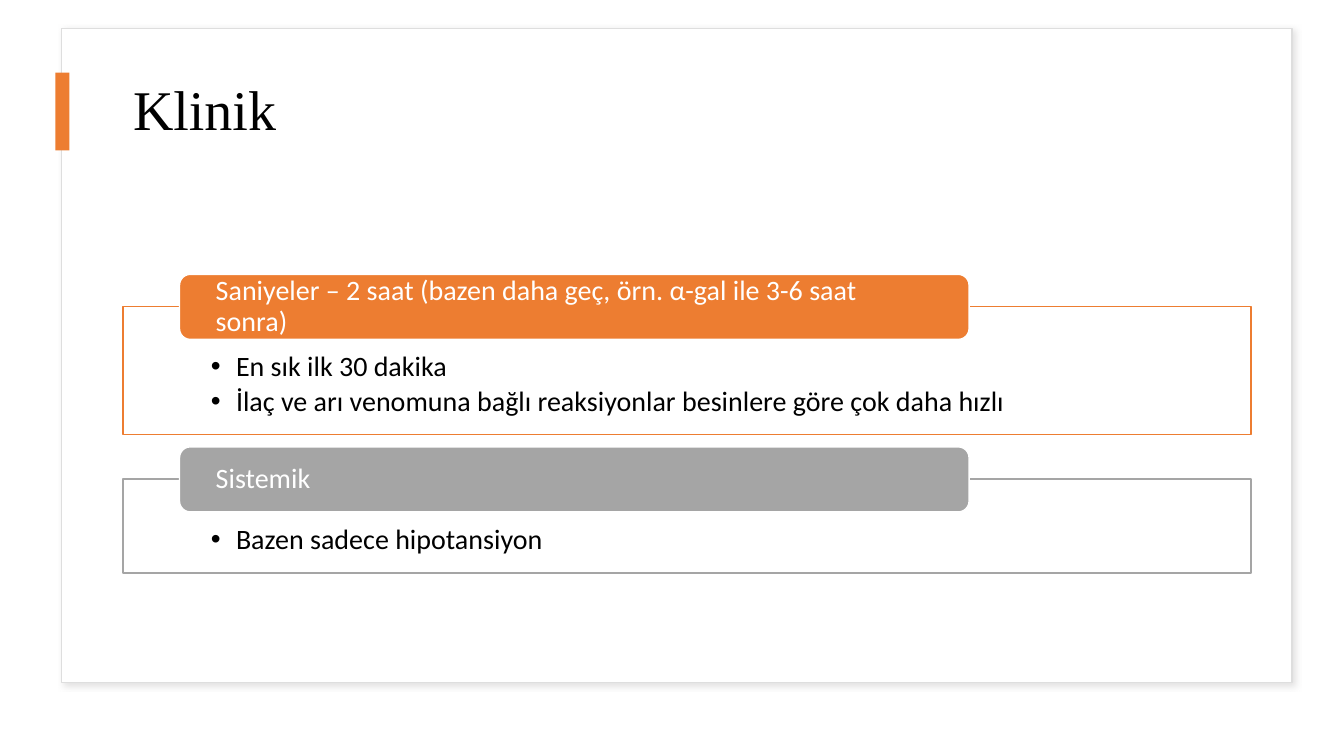
from lxml import etree
from pptx import Presentation
from pptx.dml.color import RGBColor
from pptx.enum.shapes import MSO_SHAPE as Shape
from pptx.enum.text import MSO_ANCHOR as Anchor, PP_ALIGN as Align
from pptx.oxml import parse_xml
from pptx.oxml.ns import nsdecls, qn
from pptx.util import Pt

COLORS = {
    "white": "FFFFFF",
    "black": "000000",
    "orange": "ED7D31",
    "gray": "A5A5A5",
    "border": "DEDEDE",
    "shadow": "C5C3C3",
}

deck = Presentation()
deck.slide_width, deck.slide_height = Pt(960), Pt(540)
page = deck.slides.add_slide(deck.slide_layouts[6])


def add_block(kind, left, top, width, height, fill, line=None):
    block = page.shapes.add_shape(kind, Pt(left), Pt(top), Pt(width), Pt(height))
    block.shadow.inherit = False
    block.fill.solid()
    block.fill.fore_color.rgb = RGBColor.from_string(COLORS[fill])
    if line:
        block.line.color.rgb = RGBColor.from_string(COLORS[line])
        block.line.width = Pt(1)
    else:
        block.line.fill.background()
    return block


def write_text(box, lines, frame_format, font_name, size, color, space_after=0, bullet=False):
    frame = box.text_frame
    for name, value in frame_format.items():
        setattr(frame, name, value)
    for index, line in enumerate(lines):
        para = frame.add_paragraph() if index else frame.paragraphs[0]
        if bullet:
            properties = para._p.get_or_add_pPr()
            properties.set("marL", str(Pt(18)))
            properties.set("indent", str(Pt(-18)))
            properties.append(parse_xml(f'<a:buFont {nsdecls("a")} typeface="Arial"/>'))
            properties.append(parse_xml(f'<a:buChar {nsdecls("a")} char="•"/>'))
        para.alignment = Align.LEFT
        para.line_spacing = 0.9
        para.space_after = Pt(space_after)
        span = para.add_run()
        span.text = line
        span.font.name = font_name
        span.font.size = Pt(size)
        span.font.color.rgb = RGBColor.from_string(COLORS[color])


card = add_block(Shape.RECTANGLE, 44, 20.2, 879, 467.2, "white", "border")
effects = card._element.spPr.find(qn("a:effectLst"))
effects.append(parse_xml(
    f'<a:outerShdw {nsdecls("a")} blurRad="{Pt(4)}" dist="{Pt(3)}" dir="2700000" '
    f'algn="tl" rotWithShape="0"><a:srgbClr val="{COLORS["shadow"]}">'
    '<a:alpha val="50000"/></a:srgbClr></a:outerShdw>'
))

title = page.shapes.add_textbox(Pt(88), Pt(40.3), Pt(805.7), Pt(80))
title_format = {"word_wrap": True, "vertical_anchor": Anchor.MIDDLE}
write_text(title, ["Klinik"], title_format, "Times New Roman", 40, "black")

add_block(Shape.RECTANGLE, 39.6, 51.8, 10, 55.6, "orange")

panel_format = {
    "word_wrap": True,
    "vertical_anchor": Anchor.TOP,
    "margin_left": Pt(62.6),
    "margin_right": Pt(62.6),
    "margin_top": Pt(33),
    "margin_bottom": Pt(11.5),
}
header_format = {
    "word_wrap": True,
    "vertical_anchor": Anchor.MIDDLE,
    "margin_left": Pt(23.6),
    "margin_right": Pt(23.6),
    "margin_top": 0,
    "margin_bottom": 0,
}
sections = [
    (219, 91.4, "orange", "Saniyeler – 2 saat (bazen daha geç, örn. α-gal ile 3-6 saat sonra)",
     ["En sık ilk 30 dakika",
      "İlaç ve arı venomuna bağlı reaksiyonlar besinlere göre çok daha hızlı"]),
    (342.2, 67, "gray", "Sistemik", ["Bazen sadece hipotansiyon"]),
]
for top, height, color, heading, points in sections:
    panel = add_block(Shape.RECTANGLE, 88, top, 805.7, height, "white", color)
    fill_color = panel._element.spPr.find(qn("a:solidFill"))[0]
    etree.SubElement(fill_color, qn("a:alpha"), val="90000")
    write_text(panel, points, panel_format, "Calibri", 20, "black", 3, bullet=True)
    header = add_block(Shape.ROUNDED_RECTANGLE, 128.2, top - 23, 564, 46.5, color, "white")
    write_text(header, [heading], header_format, "Calibri", 20, "white", 7)

deck.save("out.pptx")
